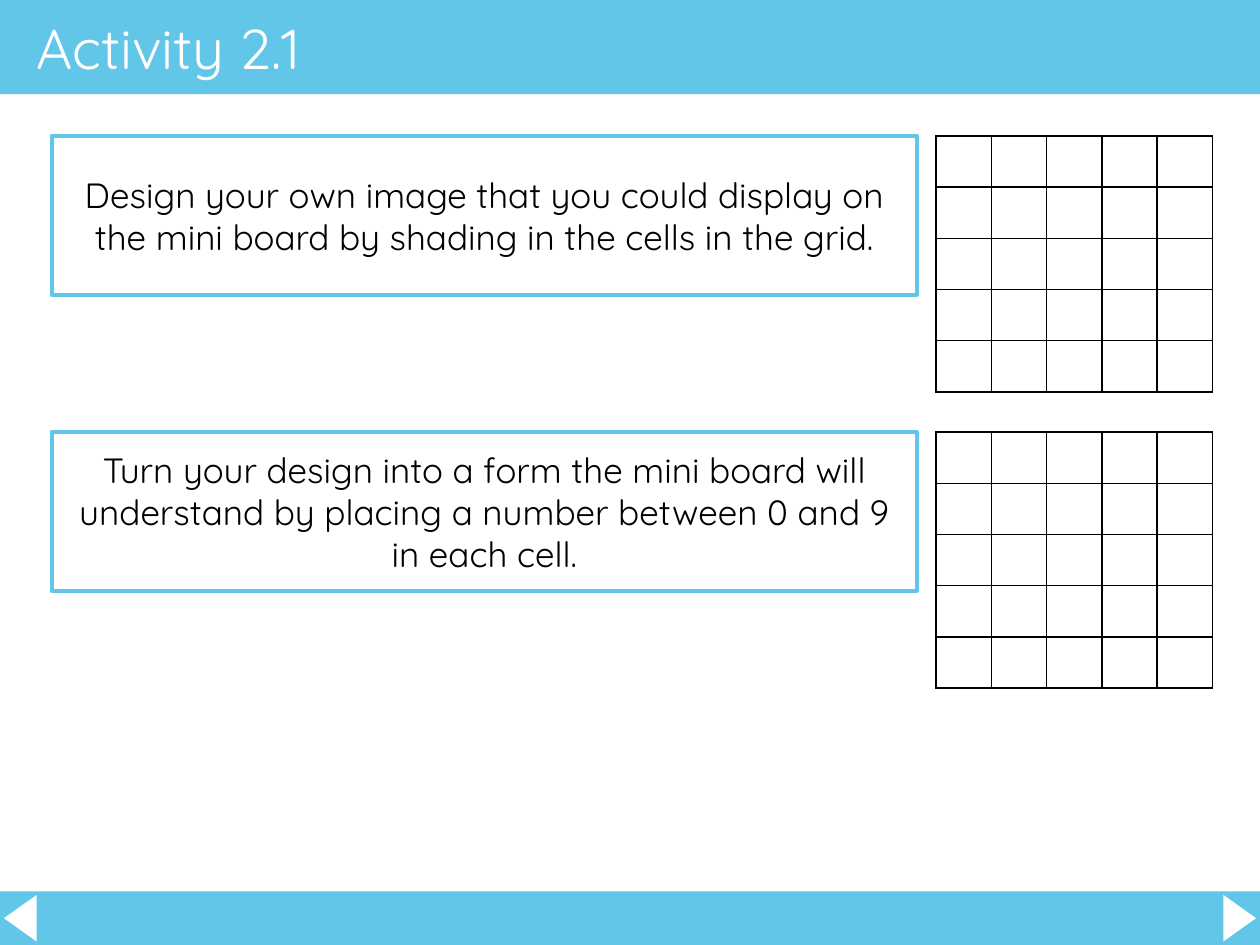
from lxml import etree
from pptx import Presentation
from pptx.dml.color import RGBColor
from pptx.enum.shapes import MSO_SHAPE
from pptx.enum.text import MSO_ANCHOR, PP_ALIGN
from pptx.oxml.ns import qn
from pptx.util import Cm, Pt

RECTANGLE = MSO_SHAPE.RECTANGLE
TRIANGLE = MSO_SHAPE.ISOSCELES_TRIANGLE
MIDDLE = MSO_ANCHOR.MIDDLE
CENTER = PP_ALIGN.CENTER

FONT = "Quicksand"
BLUE, WHITE, BLACK = "62C6E8", "FFFFFF", "000000"
SLIDE_W, SLIDE_H = 25.4, 19.05
HEADER_H, FOOTER_H = 1.9, 1.08
GRID_SIZE = 5

TASKS = [
    "Design your own image that you could display on the mini board "
    "by shading in the cells in the grid.",
    "Turn your design into a form the mini board will understand "
    "by placing a number between 0 and 9 in each cell.",
]


def rgb(hex_color):
    return RGBColor.from_string(hex_color)


def add_filled(slide, kind, left, top, width, height, color):
    shape = slide.shapes.add_shape(kind, Cm(left), Cm(top), Cm(width), Cm(height))
    shape.shadow.inherit = False
    shape.fill.solid()
    shape.fill.fore_color.rgb = rgb(color)
    shape.line.fill.background()
    return shape


def write(frame, text, size, color, align=None):
    frame.word_wrap = True
    frame.vertical_anchor = MIDDLE
    paragraph = frame.paragraphs[0]
    paragraph.text = text
    paragraph.alignment = align
    paragraph.font.name = FONT
    paragraph.font.size = Pt(size)
    paragraph.font.color.rgb = rgb(color)


def add_header(slide, left, top, width, height, title):
    add_filled(slide, RECTANGLE, left, top, width, height, BLUE)
    heading = slide.shapes.add_textbox(
        Cm(left + 0.48), Cm(top), Cm(width - 2.54), Cm(height))
    write(heading.text_frame, title, 32, WHITE)


def add_footer(slide, left, top, width, height):
    """Bar with a back arrow and a forward arrow at its ends."""
    add_filled(slide, RECTANGLE, left, top, width, height, BLUE)
    base, depth, inset = 0.94, 0.66, 0.41
    middle = top + height / 2
    for center, rotation in ((left + inset, 270), (left + width - inset, 90)):
        arrow = add_filled(slide, TRIANGLE, center - base / 2, middle - depth / 2,
                           base, depth, WHITE)
        arrow.rotation = rotation


def add_cell_borders(cell):
    properties = cell._tc.get_or_add_tcPr()
    for position, side in enumerate(("a:lnL", "a:lnR", "a:lnT", "a:lnB")):
        border = etree.Element(qn(side), w=str(Pt(1)))
        fill = etree.SubElement(border, qn("a:solidFill"))
        etree.SubElement(fill, qn("a:srgbClr"), val=BLACK)
        properties.insert(position, border)


def add_grid(slide, left, top, width, height):
    grid = slide.shapes.add_table(GRID_SIZE, GRID_SIZE, Cm(left), Cm(top),
                                  Cm(width), Cm(height)).table
    grid.first_row = grid.horz_banding = False
    for cell in grid.iter_cells():
        cell.margin_top = cell.margin_bottom = 0
        cell.fill.background()
        add_cell_borders(cell)


def add_task(slide, left, top, width, height, instruction):
    """Framed instruction on the left, empty grid on the right."""
    frame_w, frame_h, gap = 17.45, 3.2, 0.38
    frame = add_filled(slide, RECTANGLE, left, top, frame_w, frame_h, WHITE)
    frame.fill.background()
    frame.line.color.rgb = rgb(BLUE)
    frame.line.width = Pt(2.25)
    write(frame.text_frame, instruction, 20, BLACK, CENTER)
    grid_left = frame_w + gap
    add_grid(slide, left + grid_left, top, width - grid_left, height)


def main():
    presentation = Presentation()
    presentation.slide_width = Cm(SLIDE_W)
    presentation.slide_height = Cm(SLIDE_H)
    slide = presentation.slides.add_slide(presentation.slide_layouts[6])
    add_header(slide, 0, 0, SLIDE_W, HEADER_H, "Activity 2.1")
    add_footer(slide, 0, SLIDE_H - FOOTER_H, SLIDE_W, FOOTER_H)
    for row, instruction in enumerate(TASKS):
        add_task(slide, 1.04, 2.74 + row * 5.97, 23.4, 5.16, instruction)
    presentation.save("out.pptx")


if __name__ == "__main__":
    main()
